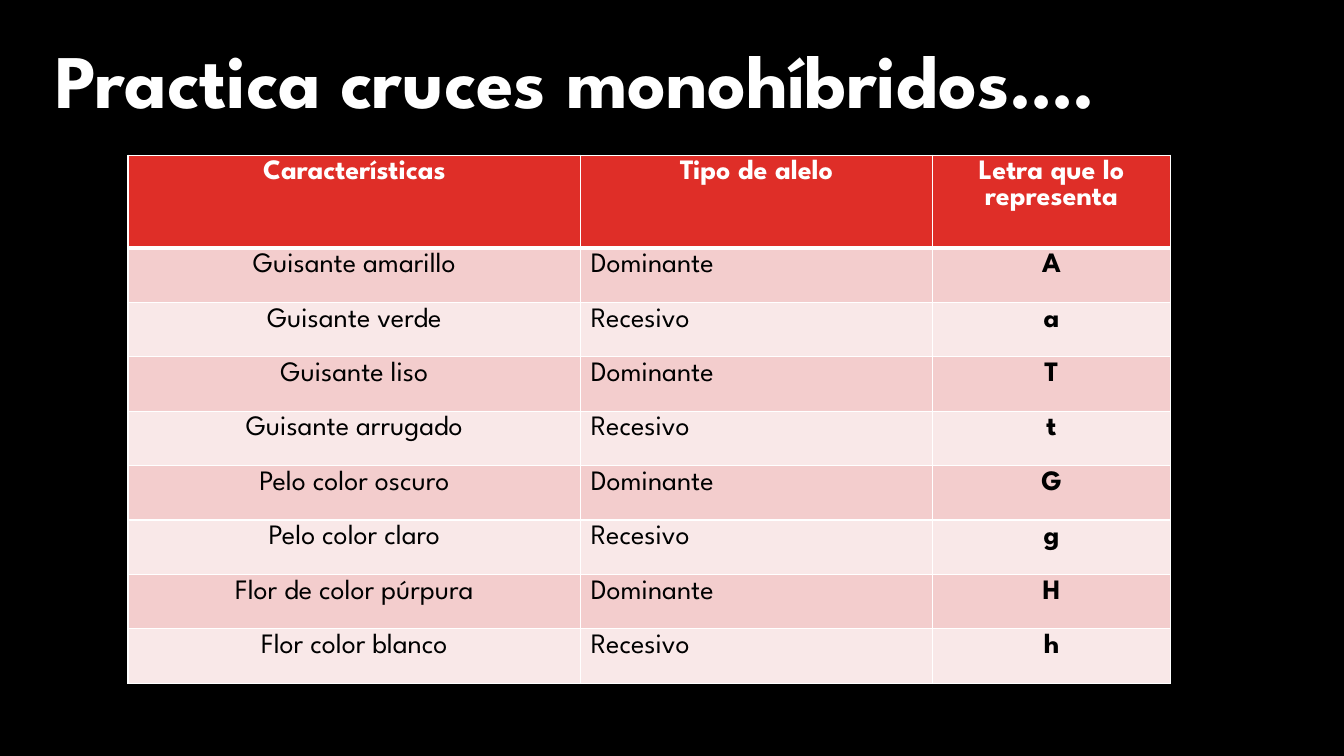
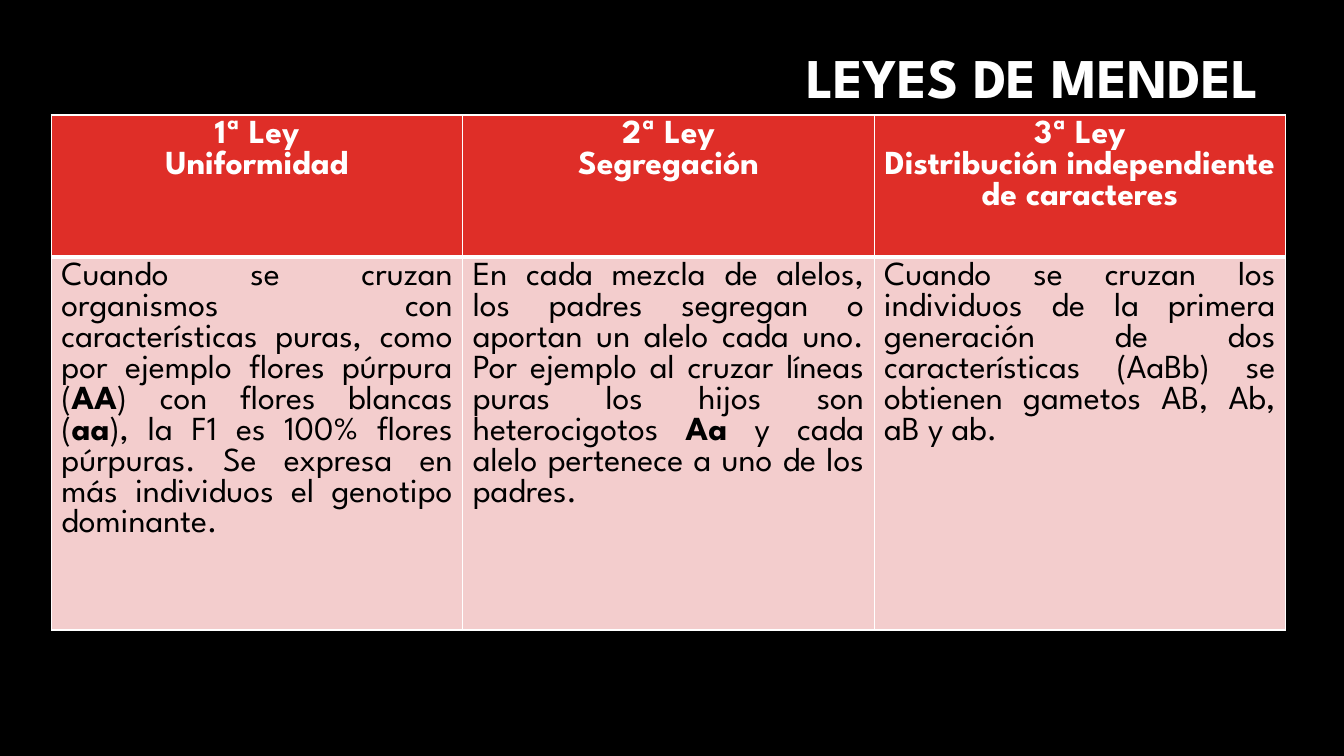
from lxml.etree import SubElement
from pptx import Presentation
from pptx.dml.color import RGBColor
from pptx.enum.text import MSO_ANCHOR, PP_ALIGN
from pptx.oxml.ns import qn
from pptx.util import Inches, Pt

FONT = "League Spartan"
HEX = {"black": "000000", "white": "FFFFFF", "red": "DF2E28",
       "rose": "F3CDCD", "pale": "F9E8E8"}
RGB = {name: RGBColor.from_string(code) for name, code in HEX.items()}
LEFT, MID, RIGHT, FULL = (PP_ALIGN.LEFT, PP_ALIGN.CENTER,
                          PP_ALIGN.RIGHT, PP_ALIGN.JUSTIFY)


def write(frame, text, size, color, align, bold):
    frame.text = text.replace("*", "")
    for para, line in zip(frame.paragraphs, text.split("\n")):
        para.alignment = align
        para.text = ""
        for i, part in enumerate(line.split("*")):
            if part:
                run = para.add_run()
                run.text = part
                run.font.name = FONT
                run.font.size = Pt(size)
                run.font.bold = bold or i % 2 == 1
                run.font.color.rgb = RGB[color]


def border(cell, head, first):
    props = cell._tc.get_or_add_tcPr()
    wide = {"lnT": 3 if first else 1, "lnB": 3 if head else 1}
    for i, side in enumerate(("lnL", "lnR", "lnT", "lnB")):
        line = props.makeelement(qn(f"a:{side}"), {"w": str(Pt(wide.get(side, 1)))})
        fill = SubElement(line, qn("a:solidFill"))
        SubElement(fill, qn("a:srgbClr"), val=HEX["white"])
        props.insert(i, line)


traits = [
    ("Guisante amarillo", "A"), ("Guisante verde", "a"),
    ("Guisante liso", "T"), ("Guisante arrugado", "t"),
    ("Pelo color oscuro", "G"), ("Pelo color claro", "g"),
    ("Flor de color púrpura", "H"), ("Flor color blanco", "h"),
]
kinds = ("Dominante", "Recesivo")
cross = [("Características", "Tipo de alelo", "Letra que lo representa")]
cross += [(trait, kinds[i % 2], f"*{sign}*") for i, (trait, sign) in enumerate(traits)]

laws = [
    ("1ª Ley\nUniformidad", "2ª Ley\nSegregación",
     "3ª Ley\nDistribución independiente de caracteres"),
    ("Cuando se cruzan organismos con características puras, como por ejemplo "
     "flores púrpura (*AA*) con flores blancas (*aa*), la F1 es 100% flores "
     "púrpuras. Se expresa en más individuos el genotipo dominante.",
     "En cada mezcla de alelos, los padres segregan o aportan un alelo cada uno. "
     "Por ejemplo al cruzar líneas puras los hijos son heterocigotos *Aa* y cada "
     "alelo pertenece a uno de los padres.",
     "Cuando se cruzan los individuos de la primera generación de dos "
     "características (AaBb) se obtienen gametos AB, Ab, aB y ab."),
]

pages = [
    {"title": "Practica cruces monohíbridos….", "box": (0.45, 0.27, 12.46, 1.01),
     "size": 54, "side": LEFT, "anchor": MSO_ANCHOR.BOTTOM, "top": 0.05, "lead": 1.0,
     "rows": cross, "at": (1.27, 1.54), "wide": (4.49, 3.49, 2.36),
     "high": [0.92] + [0.54] * len(traits), "body": 20, "align": (MID, LEFT, MID)},
    {"title": "LEYES DE MENDEL", "box": (7.56, 0.3, 5.02, 0.97),
     "size": 40, "side": RIGHT, "anchor": MSO_ANCHOR.TOP, "top": 0.2, "lead": 0.9,
     "rows": laws, "at": (0.51, 1.14), "wide": (4.08,) * 3,
     "high": [1.41, 2.86], "body": 24, "align": (FULL,) * 3},
]

prs = Presentation()
prs.slide_width = Inches(13.33)
prs.slide_height = Inches(7.5)
back = prs.slide_master.background.fill
back.solid()
back.fore_color.rgb = RGB["black"]

for page in pages:
    slide = prs.slides.add_slide(prs.slide_layouts[6])

    frame = slide.shapes.add_textbox(*map(Inches, page["box"])).text_frame
    frame.word_wrap = True
    frame.vertical_anchor = page["anchor"]
    frame.margin_top = Inches(page["top"])
    write(frame, page["title"], page["size"], "white", page["side"], True)
    frame.paragraphs[0].line_spacing = page["lead"]

    rows, wide, high = page["rows"], page["wide"], page["high"]
    area = (*page["at"], sum(wide), sum(high))
    table = slide.shapes.add_table(len(rows), len(wide), *map(Inches, area)).table
    for col, width in zip(table.columns, wide):
        col.width = Inches(width)
    for r, row in enumerate(rows):
        table.rows[r].height = Inches(high[r])
        head = r == 0
        shade = "red" if head else ("pale", "rose")[r % 2]
        for c, text in enumerate(row):
            cell = table.cell(r, c)
            cell.fill.solid()
            cell.fill.fore_color.rgb = RGB[shade]
            border(cell, head, r == 1)
            write(cell.text_frame, text, page["body"], "white" if head else "black",
                  MID if head else page["align"][c], head)

prs.save("out.pptx")
